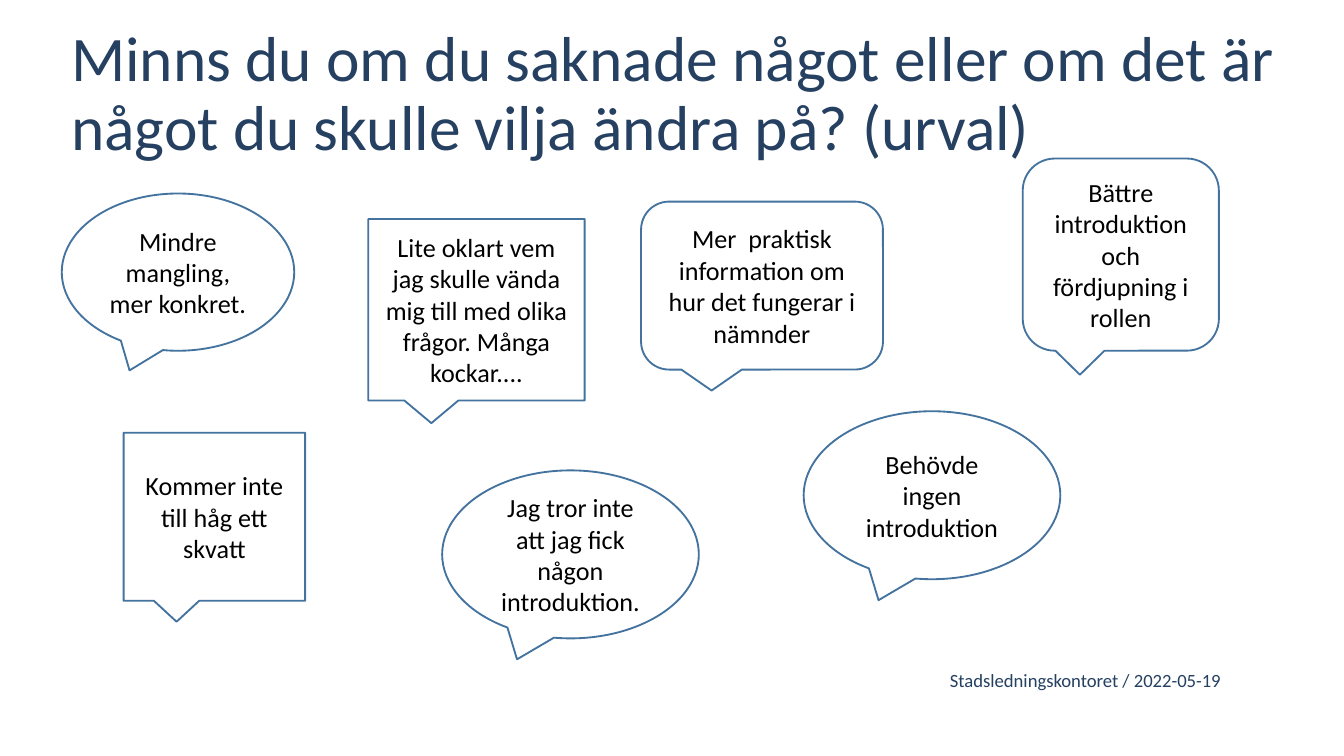
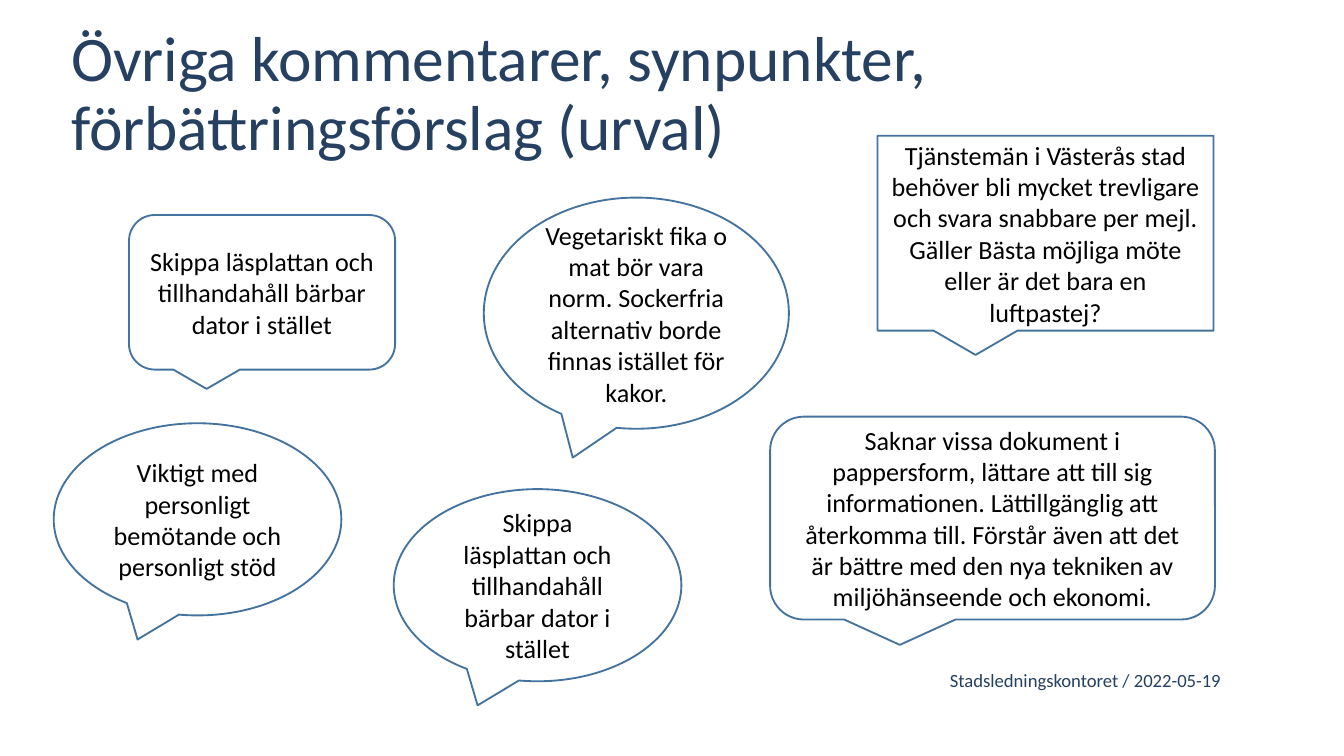
"""Build two slides of survey answers shown in speech bubbles."""
from typing import NamedTuple

from pptx import Presentation
from pptx.dml.color import RGBColor
from pptx.enum.shapes import MSO_SHAPE
from pptx.enum.text import MSO_ANCHOR, PP_ALIGN
from pptx.util import Inches, Pt

OVAL = MSO_SHAPE.OVAL_CALLOUT
BOX = MSO_SHAPE.RECTANGULAR_CALLOUT
ROUNDED = MSO_SHAPE.ROUNDED_RECTANGULAR_CALLOUT
LEFT, CENTER, RIGHT = PP_ALIGN.LEFT, PP_ALIGN.CENTER, PP_ALIGN.RIGHT
TOP, MIDDLE, BOTTOM = MSO_ANCHOR.TOP, MSO_ANCHOR.MIDDLE, MSO_ANCHOR.BOTTOM

COLORS = {"heading": "254061", "outline": "43739E", "answer": "000000"}
FONT = "Calibri"
FOOTER = "Stadsledningskontoret / 2022-05-19"
BLANK_LAYOUT = 6
SLIDE_WIDTH = Inches(10)
SLIDE_HEIGHT = SLIDE_WIDTH * 9 // 16


class Bubble(NamedTuple):
    kind: MSO_SHAPE
    left: float
    top: float
    width: float
    height: float
    text: str


class Page(NamedTuple):
    title: str
    bubbles: list[Bubble]


PAGES = [
    Page("Minns du om du saknade något eller om det är något du skulle vilja ändra på? (urval)", [
        Bubble(OVAL, 0.46, 1.44, 1.73, 1.17, "Mindre mangling, mer konkret."),
        Bubble(ROUNDED, 7.61, 1.18, 1.46, 1.43, "Bättre introduktion och fördjupning i rollen"),
        Bubble(BOX, 0.92, 3.22, 1.35, 1.25, "Kommer inte till håg ett skvatt"),
        Bubble(OVAL, 5.98, 3.06, 1.91, 1.25, "Behövde ingen introduktion"),
        Bubble(ROUNDED, 4.77, 1.5, 1.8, 1.25,
               "Mer  praktisk information om hur det fungerar i nämnder"),
        Bubble(OVAL, 3.29, 3.5, 1.91, 1.25, "Jag tror inte att jag fick någon introduktion."),
        Bubble(BOX, 2.74, 1.63, 1.61, 1.35,
               "Lite oklart vem jag skulle vända mig till med olika frågor. Många kockar...."),
    ]),
    Page("Övriga kommentarer, synpunkter, förbättringsförslag (urval)", [
        Bubble(ROUNDED, 0.96, 1.6, 1.98, 1.15,
               "Skippa läsplattan och tillhandahåll bärbar dator i stället"),
        Bubble(BOX, 6.53, 1.01, 2.5, 1.45,
               "Tjänstemän i Västerås stad behöver bli mycket trevligare och svara snabbare "
               "per mejl. Gäller Bästa möjliga möte eller är det bara en luftpastej?"),
        Bubble(OVAL, 3.6, 1.47, 2.27, 1.72,
               "Vegetariskt fika o mat bör vara norm. Sockerfria alternativ borde finnas "
               "istället för kakor."),
        Bubble(ROUNDED, 5.73, 3.1, 3.31, 1.51,
               "Saknar vissa dokument i pappersform, lättare att till sig informationen. "
               "Lättillgänglig att återkomma till. Förstår även att det är bättre med den nya "
               "tekniken av miljöhänseende och ekonomi."),
        Bubble(OVAL, 0.4, 3.15, 2.14, 1.43,
               "Viktigt med personligt bemötande och personligt stöd"),
        Bubble(OVAL, 2.93, 3.64, 2.14, 1.43,
               "Skippa läsplattan och tillhandahåll bärbar dator i stället"),
    ]),
]


def write_text(shape, text: str, size: int, color: str, alignment: PP_ALIGN, anchor: MSO_ANCHOR):
    frame = shape.text_frame
    frame.word_wrap = True
    frame.vertical_anchor = anchor
    paragraph = frame.paragraphs[0]
    paragraph.text = text
    paragraph.alignment = alignment
    paragraph.font.name = FONT
    paragraph.font.size = Pt(size)
    paragraph.font.color.rgb = RGBColor.from_string(COLORS[color])
    return frame


def add_title(slide, text: str) -> None:
    shape = slide.shapes.add_textbox(Inches(0.53), Inches(0.2), Inches(9.13), Inches(0.67))
    frame = write_text(shape, text, 34, "heading", LEFT, TOP)
    frame.margin_left = frame.margin_top = frame.margin_right = frame.margin_bottom = 0
    frame.paragraphs[0].line_spacing = 0.9


def add_footer(slide) -> None:
    shape = slide.shapes.add_textbox(Inches(5.24), Inches(4.92), Inches(3.94), Inches(0.27))
    write_text(shape, FOOTER, 10, "heading", RIGHT, BOTTOM)


def add_bubble(slide, bubble: Bubble) -> None:
    shape = slide.shapes.add_shape(
        bubble.kind, Inches(bubble.left), Inches(bubble.top),
        Inches(bubble.width), Inches(bubble.height))
    shape.shadow.inherit = False
    shape.fill.background()
    shape.line.color.rgb = RGBColor.from_string(COLORS["outline"])
    shape.line.width = Pt(1)
    write_text(shape, bubble.text, 14, "answer", CENTER, MIDDLE)


def main() -> None:
    presentation = Presentation()
    presentation.slide_width = SLIDE_WIDTH
    presentation.slide_height = SLIDE_HEIGHT
    for page in PAGES:
        slide = presentation.slides.add_slide(presentation.slide_layouts[BLANK_LAYOUT])
        add_footer(slide)
        add_title(slide, page.title)
        for bubble in page.bubbles:
            add_bubble(slide, bubble)
    presentation.save("out.pptx")


if __name__ == "__main__":
    main()
